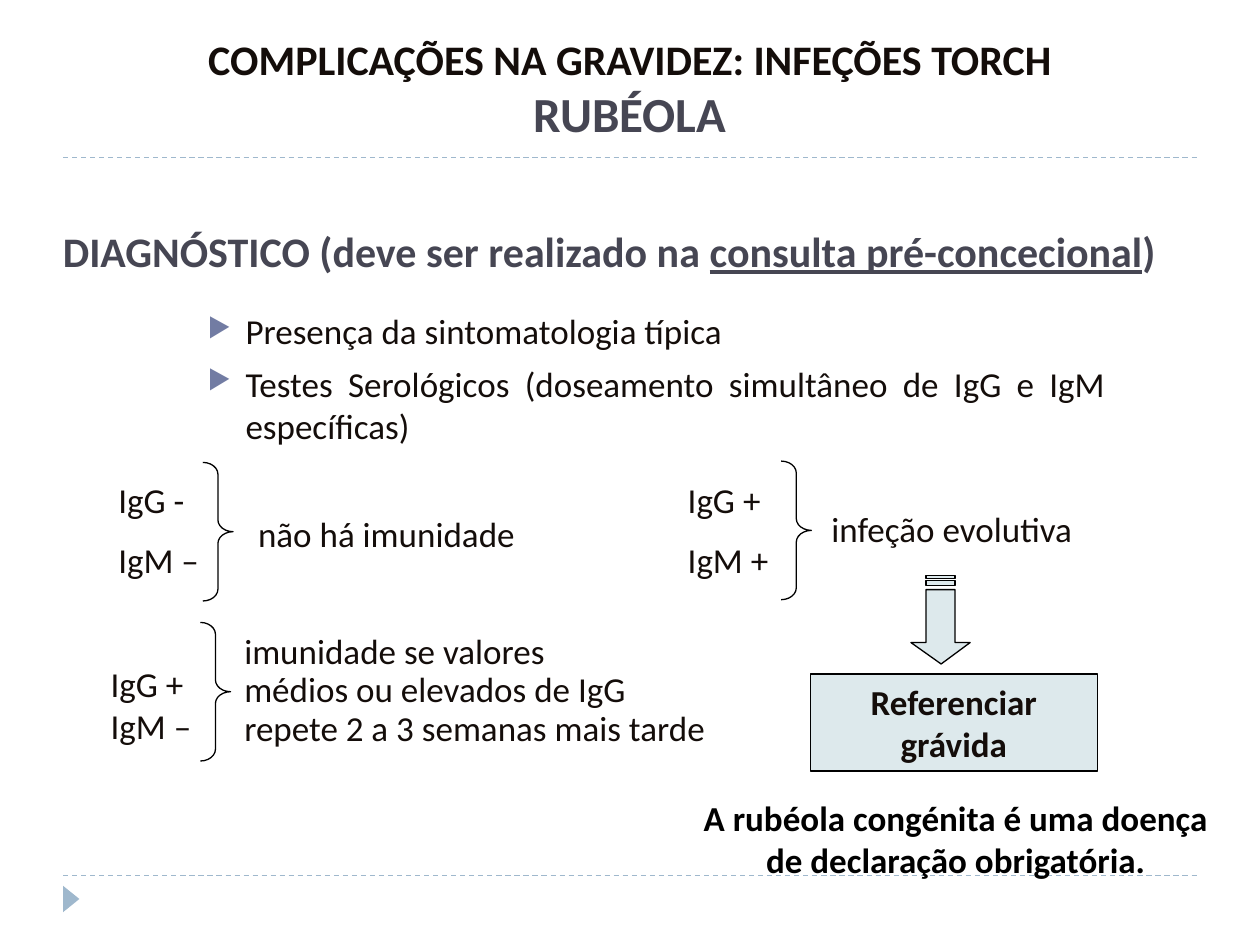
from dataclasses import dataclass

from lxml import etree
from pptx import Presentation
from pptx.dml.color import RGBColor
from pptx.enum.dml import MSO_LINE
from pptx.enum.shapes import MSO_CONNECTOR, MSO_SHAPE
from pptx.enum.text import MSO_ANCHOR, MSO_AUTO_SIZE, PP_ALIGN
from pptx.oxml.ns import qn
from pptx.util import Inches, Pt

DASH = MSO_LINE.DASH
STRAIGHT = MSO_CONNECTOR.STRAIGHT
BRACE = MSO_SHAPE.RIGHT_BRACE
RECT = MSO_SHAPE.RECTANGLE
TRIANGLE = MSO_SHAPE.ISOSCELES_TRIANGLE
TOP, MIDDLE = MSO_ANCHOR.TOP, MSO_ANCHOR.MIDDLE
NO_FIT = MSO_AUTO_SIZE.NONE
CENTER, JUSTIFY = PP_ALIGN.CENTER, PP_ALIGN.JUSTIFY


@dataclass(frozen=True)
class Theme:
    """Colours, font and type sizes of the slide."""
    ink: str = "140D0A"
    black: str = "000000"
    slate: str = "464653"
    rule: str = "9FB8CD"
    pale: str = "DDE9EC"
    bullet: str = "727CA3"
    font: str = "Calibri"
    body: int = 20
    head: int = 24
    title: int = 28
    line: float = 0.75


THEME = Theme()


def rgb(code):
    """Turn a hex code into a colour."""
    return RGBColor.from_string(code)


def box(place):
    """Turn left, top, width and height into lengths."""
    return [Inches(n) for n in place]


def style(para, size=THEME.body, color=THEME.ink, bold=False):
    """Format every run of a paragraph."""
    for run in para.runs:
        font = run.font
        font.name, font.size, font.bold = THEME.font, Pt(size), bold
        font.color.rgb = rgb(color)


def write(shape, lines, align=JUSTIFY, gap=0, space=None, wrap=True, **look):
    """Fill a shape with evenly formatted paragraphs."""
    frame = shape.text_frame
    frame.text = "\n".join(lines)
    frame.word_wrap = wrap
    for para in frame.paragraphs:
        para.alignment = align
        para.space_before = Pt(gap)
        para.line_spacing = space
        style(para, **look)
    return frame


def add_text(slide, place, lines, **look):
    """Add a text box."""
    area = slide.shapes.add_textbox(*box(place))
    frame = write(area, lines, **look)
    frame.vertical_anchor = TOP
    return frame


def paint(shape, fill=None, line=None):
    """Set fill and outline and drop the shadow."""
    shape.shadow.inherit = False
    if fill:
        shape.fill.solid()
        shape.fill.fore_color.rgb = rgb(fill)
    else:
        shape.fill.background()
    if line:
        shape.line.color.rgb = rgb(line)
        shape.line.width = Pt(THEME.line)
    else:
        shape.line.fill.background()


def add_rule(slide, top):
    """Add a dashed rule across the slide."""
    rule = slide.shapes.add_connector(
        STRAIGHT, Inches(0.5), Inches(top), Inches(9.5), Inches(top))
    rule.line.color.rgb = rgb(THEME.rule)
    rule.line.width = Pt(THEME.line)
    rule.line.dash_style = DASH
    etree.SubElement(rule.element.spPr, qn("a:effectLst"))


def add_brace(slide, left, top):
    """Add a right brace beside a pair of results."""
    brace = slide.shapes.add_shape(BRACE, *box((left, top, 0.24, 1.1)))
    brace.adjustments[0] = 0.39
    paint(brace, line=THEME.black)


def add_marker(slide):
    """Add the footer triangle."""
    marker = slide.shapes.add_shape(TRIANGLE, *box((0.46, 7.07, 0.21, 0.13)))
    marker.rotation = 90
    paint(marker, THEME.rule)


def add_arrow(slide):
    """Add the striped down arrow, plotted in hundredths of an inch."""
    left, right = 735, 758
    head = [(770, 510), (right, 510), (right, 468), (left, 468),
            (left, 510), (723, 510), (747, 527)]
    bars = [[(right, top), (left, top), (left, low), (right, low)]
            for top, low in ((461, 465), (457, 459))]
    pen = slide.shapes.build_freeform(*head[0], scale=Inches(0.01))
    pen.add_line_segments(head[1:])
    for bar in bars:
        pen.move_to(*bar[0])
        pen.add_line_segments(bar[1:])
    paint(pen.convert_to_shape(), THEME.pale, THEME.black)


def add_bullet(para):
    """Give a paragraph a hanging triangle bullet."""
    props = para._p.get_or_add_pPr()
    props.set("marL", str(Inches(0.3)))
    props.set("indent", str(-Inches(0.3)))
    color = etree.SubElement(props, qn("a:buClr"))
    etree.SubElement(color, qn("a:srgbClr"), val=THEME.bullet)
    etree.SubElement(props, qn("a:buSzPct"), val="76000")
    etree.SubElement(props, qn("a:buChar"), char="▶")


def add_title(slide):
    """Place and format the two title lines."""
    title = slide.shapes.title
    title.left, title.top, title.width, title.height = box(
        (0.51, 0.21, 8.98, 0.98))
    frame = write(title, ["COMPLICAÇÕES NA GRAVIDEZ: INFEÇÕES TORCH", "RUBÉOLA"],
                  align=CENTER, size=THEME.head, bold=True)
    frame.auto_size = NO_FIT
    frame.vertical_anchor = MIDDLE
    style(frame.paragraphs[1], THEME.title, THEME.slate, True)


def add_heading(slide):
    """Add the diagnosis heading with its underlined phrase."""
    frame = add_text(slide, (0.4, 1.74, 8.95, 0.51),
                     ["DIAGNÓSTICO (deve ser realizado na "], wrap=False)
    para = frame.paragraphs[0]
    phrase = para.add_run()
    phrase.text = "consulta pré-concecional"
    phrase.font.underline = True
    para.add_run().text = ")"
    style(para, THEME.head, THEME.slate, True)


def add_tests(slide):
    """Add the result pairs with their braces and meanings."""
    add_text(slide, (0.84, 3.75, 1.02, 0.93), ["IgG -", "IgM –"], gap=10)
    add_text(slide, (5.36, 3.75, 0.85, 0.94), ["IgG +", "IgM +"],
             gap=10, wrap=False)
    add_text(slide, (0.78, 5.21, 1.1, 0.77), ["IgG +", "IgM –"])
    for left, top in ((1.61, 3.67), (1.59, 4.94), (6.2, 3.66)):
        add_brace(slide, left, top)
    add_text(slide, (1.95, 4.02, 2.26, 0.44), ["não há imunidade"],
             gap=10, wrap=False)
    add_text(slide, (6.5, 3.98, 2.13, 0.44), ["infeção evolutiva"],
             gap=10, wrap=False)
    add_text(slide, (1.84, 5.09, 3.95, 0.94),
             ["imunidade se valores", "médios ou elevados de IgG",
              "repete 2 a 3 semanas mais tarde"],
             gap=10, space=0.5, wrap=False)


def main():
    """Build and save the slide."""
    deck = Presentation()
    deck.slide_width, deck.slide_height = Inches(10), Inches(7.5)
    slide = deck.slides.add_slide(deck.slide_layouts[5])
    for top in (1.25, 6.95):
        add_rule(slide, top)
    add_marker(slide)
    add_title(slide)
    add_heading(slide)
    signs = add_text(slide, (1.55, 2.41, 7.32, 1.18), [
        "Presença da sintomatologia típica",
        "Testes Serológicos (doseamento simultâneo de IgG e IgM específicas)",
    ], gap=6)
    for para in signs.paragraphs:
        add_bullet(para)
    add_tests(slide)
    add_arrow(slide)
    refer = slide.shapes.add_shape(RECT, *box((6.43, 5.35, 2.28, 0.77)))
    paint(refer, THEME.pale, THEME.black)
    write(refer, ["Referenciar grávida"], align=CENTER, bold=True)
    add_text(slide, (5.44, 6.27, 4.29, 0.77),
             ["A rubéola congénita é uma doença de declaração obrigatória."],
             align=CENTER, color=THEME.black, bold=True)
    deck.save("out.pptx")


if __name__ == "__main__":
    main()
